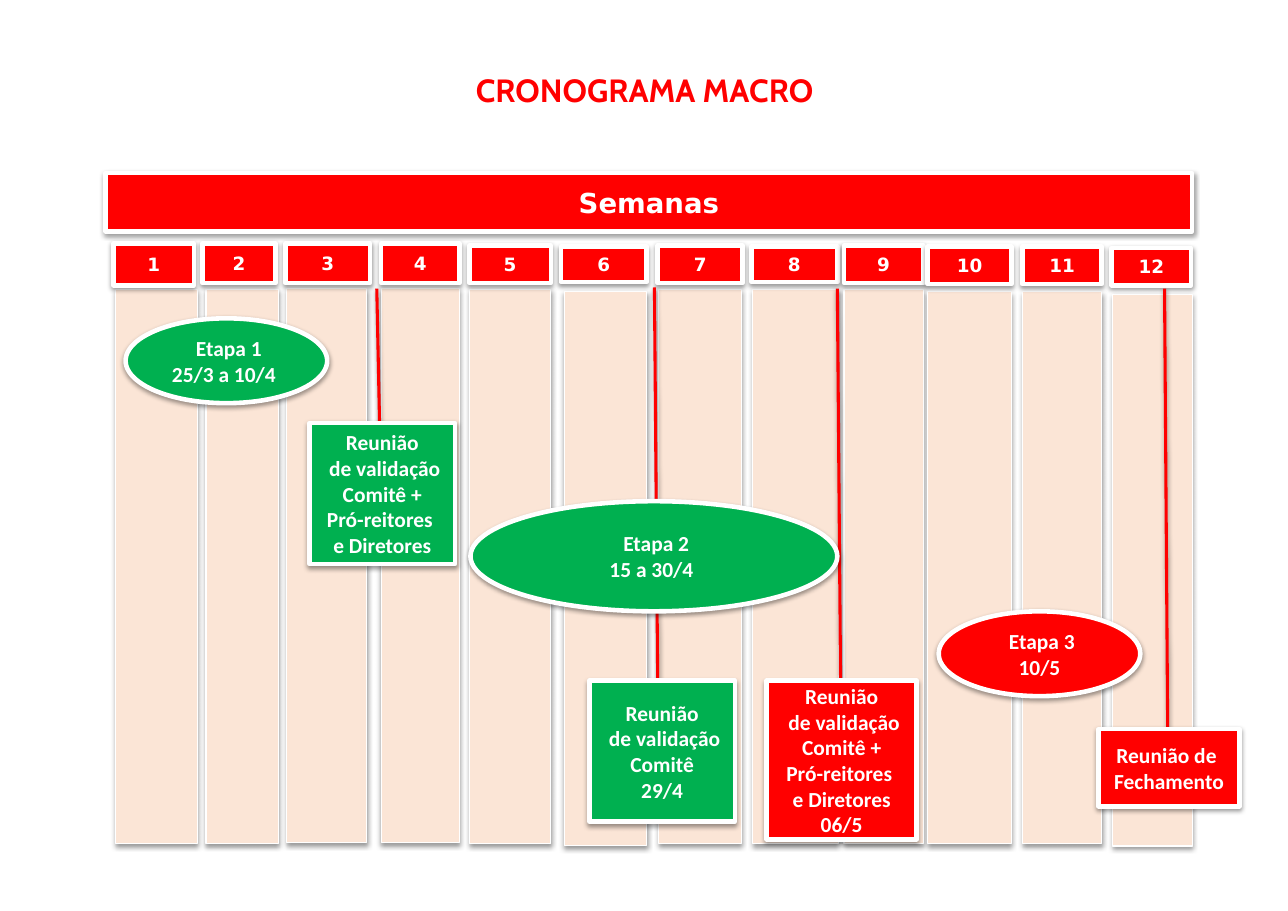
from pptx import Presentation
from pptx import util as u
from pptx.dml.color import RGBColor
from pptx.enum import shapes, text
from pptx.oxml import parse_xml
from pptx.oxml.ns import nsdecls

RED = RGBColor(0xFF, 0x00, 0x00)
GREEN = RGBColor(0x00, 0xB0, 0x50)
PEACH = RGBColor(0xFB, 0xE5, 0xD6)
WHITE = RGBColor(0xFF, 0xFF, 0xFF)

RECTANGLE = shapes.MSO_SHAPE.RECTANGLE
OVAL = shapes.MSO_SHAPE.OVAL

# Lengths count grid cells: ten columns and ten rows to the inch.
CELL = u.Inches(0.1)
SHADOW = f"""<a:effectLst {nsdecls("a")}>
  <a:outerShdw blurRad="{u.Pt(3.1)}" dist="{u.Pt(1.6)}" dir="5400000" rotWithShape="0">
    <a:srgbClr val="000000"><a:alpha val="38000"/></a:srgbClr>
  </a:outerShdw>
</a:effectLst>"""

# Bar: left, top, width, height; header: left, top, width, height
WEEKS = [
    ((10.5, 26.3, 7.4, 50.3), (10.3, 22.1, 7.3, 3.8)),
    ((18.7, 26.3, 6.6, 50.3), (18.4, 22.1, 6.6, 3.6)),
    ((26.0, 26.2, 7.3, 50.3), (25.9, 22.1, 7.7, 3.6)),
    ((34.6, 26.2, 7.1, 50.3), (34.6, 22.1, 7.1, 3.6)),
    ((42.6, 26.3, 7.4, 50.3), (42.6, 22.3, 7.4, 3.4)),
    ((51.2, 26.5, 7.5, 50.3), (50.9, 22.4, 7.8, 3.2)),
    ((59.8, 26.3, 7.5, 50.3), (59.7, 22.3, 7.7, 3.4)),
    ((68.3, 26.3, 7.8, 50.3), (68.2, 22.4, 7.8, 3.2)),
    ((76.6, 26.3, 7.2, 50.3), (76.6, 22.3, 7.2, 3.4)),
    ((84.2, 26.5, 7.6, 50.1), (84.2, 22.4, 7.6, 3.4)),
    ((92.8, 26.5, 7.2, 50.1), (92.8, 22.4, 7.2, 3.4)),
    ((101.0, 26.7, 7.2, 50.1), (100.9, 22.5, 7.2, 3.4)),
]

# Left end, top, bottom; every line leans LEAN columns to the right
MEETING_LINES = [
    (34.2, 26.2, 40.8),
    (59.4, 26.1, 62.3),
    (76.0, 26.2, 62.5),
    (105.7, 26.2, 68.9),
]
LEAN = 0.3

STAGES = [
    (" Etapa 1\n25/3 a 10/4 ", (11.4, 28.9, 18.3, 7.7), GREEN),
    (" Etapa 2\n15 a 30/4 ", (42.7, 45.5, 33.3, 10), GREEN),
    (" Etapa 3\n10/5", (85.2, 55.5, 18.3, 7.7), RED),
]

VALIDATION = "Reunião\n de validação\nComitê"
DIRECTORS = VALIDATION + " +\nPró-reitores \ne Diretores"
MEETINGS = [
    (DIRECTORS, (28.1, 38.4, 13.2, 12.8), GREEN),
    ("Reunião de \nFechamento", (99.7, 66.2, 12.8, 7), RED),
    (VALIDATION + "\n29/4", (53.5, 61.8, 13.2, 12.8), GREEN),
    (DIRECTORS + "\n06/5", (69.6, 61.8, 13.6, 14.4), RED),
]


def cells(*counts):
    return [round(count * CELL) for count in counts]


def write(frame, words, size, font, color=WHITE):
    """Fill a text frame with bold centred paragraphs, one per line of words."""
    for index, line in enumerate(words.split("\n")):
        para = frame.paragraphs[0] if index == 0 else frame.add_paragraph()
        para.alignment = text.PP_ALIGN.CENTER
        span = para.add_run()
        span.text = line
        span.font.size = u.Pt(size)
        span.font.name = font
        span.font.bold = True
        span.font.color.rgb = color


class Schedule:
    """Draws the elements of a timetable on one page."""

    def __init__(self, page):
        self.page = page

    def title(self, words, area):
        box = self.page.shapes.add_textbox(*cells(*area))
        box.text_frame.word_wrap = True
        box.text_frame.auto_size = text.MSO_AUTO_SIZE.SHAPE_TO_FIT_TEXT
        write(box.text_frame, words, 21, "Cabin", RED)

    def panel(self, kind, area, fill, border=3):
        panel = self.page.shapes.add_shape(kind, *cells(*area))
        panel.fill.solid()
        panel.fill.fore_color.rgb = fill
        panel.line.color.rgb = WHITE
        panel.line.width = u.Pt(border)
        panel._element.spPr.append(parse_xml(SHADOW))
        return panel

    def header(self, words, area, size=12):
        frame = self.panel(RECTANGLE, area, RED).text_frame
        frame.vertical_anchor = text.MSO_ANCHOR.MIDDLE
        frame.word_wrap = True
        write(frame, words, size, "DejaVu Sans")

    def event(self, kind, words, area, fill):
        frame = self.panel(kind, area, fill).text_frame
        frame.vertical_anchor = text.MSO_ANCHOR.MIDDLE
        frame.word_wrap = False
        frame.margin_left = frame.margin_right = u.Inches(0.11)
        frame.margin_top = frame.margin_bottom = u.Inches(0.06)
        write(frame, words, 14, "Calibri")

    def meeting_line(self, left, top, bottom):
        line = self.page.shapes.add_connector(
            shapes.MSO_CONNECTOR.STRAIGHT, *cells(left, top, left + LEAN, bottom))
        line.line.color.rgb = RED
        line.line.width = u.Pt(2)
        line._element.spPr.append(parse_xml(SHADOW))


def main():
    deck = Presentation()
    deck.slide_width, deck.slide_height = cells(116.9, 82.7)
    schedule = Schedule(deck.slides.add_slide(deck.slide_layouts[6]))

    schedule.title("CRONOGRAMA MACRO", (23.1, 5.9, 70.8, 4.5))
    for bar, _ in WEEKS:
        schedule.panel(RECTANGLE, bar, PEACH, border=0.75)
    schedule.header("Semanas", (9.6, 15.7, 98.6, 5.3), size=18)
    for number, (_, header) in enumerate(WEEKS, start=1):
        schedule.header(str(number), header)
    for line in MEETING_LINES:
        schedule.meeting_line(*line)
    for stage in STAGES:
        schedule.event(OVAL, *stage)
    for meeting in MEETINGS:
        schedule.event(RECTANGLE, *meeting)

    deck.save("out.pptx")


if __name__ == "__main__":
    main()
